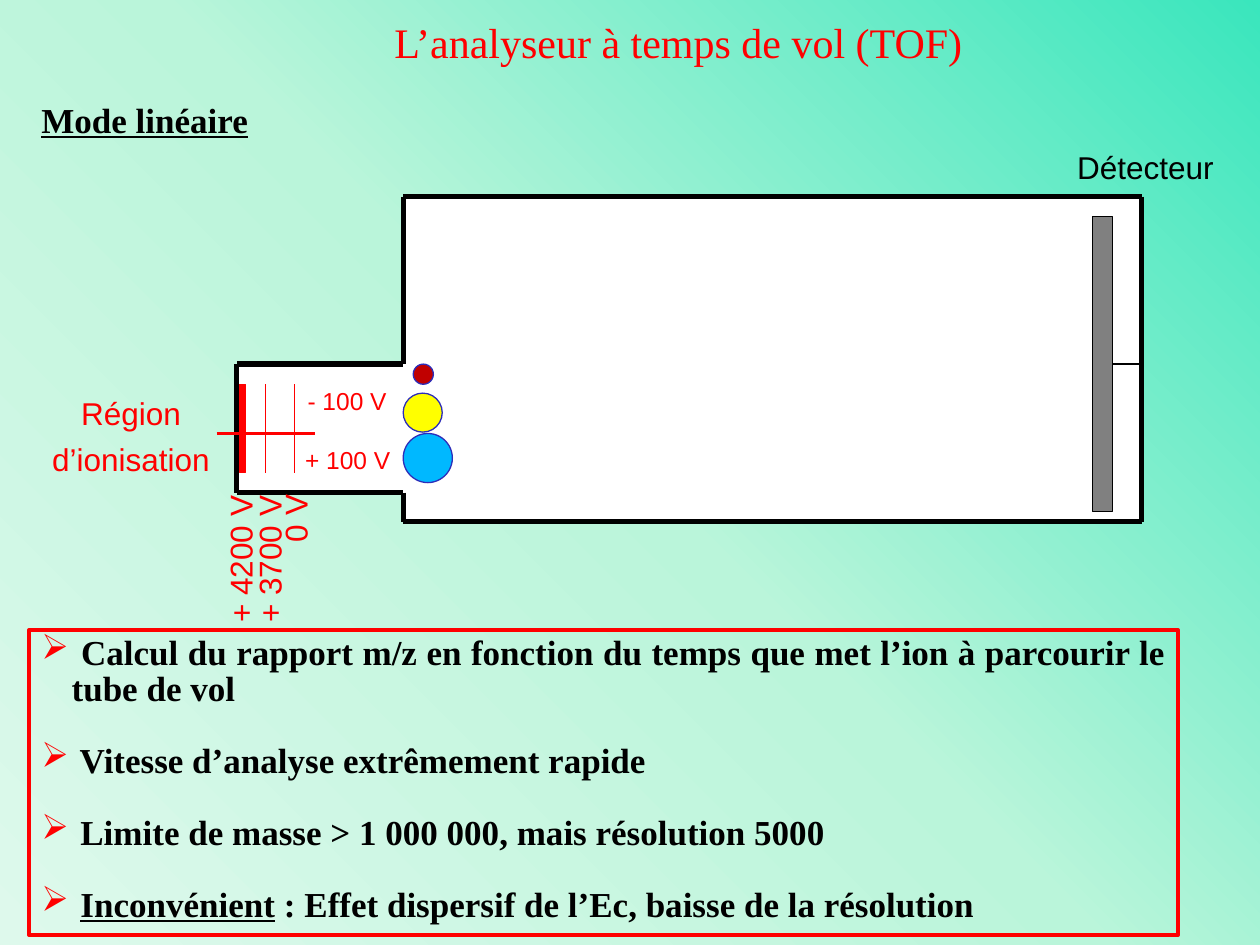
"""Build the slide on the linear time-of-flight analyser."""
from copy import deepcopy
from lxml.etree import SubElement
from pptx import Presentation
from pptx.dml.color import RGBColor
from pptx.enum.shapes import MSO_CONNECTOR, MSO_SHAPE
from pptx.enum.text import MSO_ANCHOR, MSO_AUTO_SIZE, PP_ALIGN
from pptx.oxml.ns import qn
from pptx.util import Inches, Pt

RED = RGBColor(0xFF, 0, 0)
BLACK = RGBColor(0, 0, 0)
WHITE = RGBColor(0xFF, 0xFF, 0xFF)
GREY = RGBColor(0x80, 0x80, 0x80)
NAVY = RGBColor(0x2D, 0x2D, 0xB9)
CRIMSON = RGBColor(0xC0, 0, 0)
YELLOW = RGBColor(0xFF, 0xFF, 0)
SKY = RGBColor(0, 0xB8, 0xFF)
SHADES = [(0, RGBColor(0x3A, 0xE6, 0xBD)), (0.5, RGBColor(0xBA, 0xF5, 0xDA)),
          (1, RGBColor(0xDE, 0xF9, 0xEC))]
SERIF, SANS = "Times New Roman", "Arial"

TITLE = "L’analyseur à temps de vol (TOF)"
MODE = "Mode linéaire"
POINTS = [
    [(" Calcul du rapport m/z en fonction du temps que met l’ion à parcourir le tube de vol", False)],
    [(" Vitesse d’analyse extrêmement rapide", False)],
    [(" Limite de masse > 1 000 000, mais résolution 5000", False)],
    [(" ", False), ("Inconvénient", True),
     (" : Effet dispersif de l’Ec, baisse de la résolution", False)],
]
LABELS = [
    (["Détecteur"], (8.44, 1.17, 1.3, 0.36), 18, BLACK, 0),
    (["Région", "d’ionisation"], (0.31, 3.12, 1.46, 0.73), 18, RED, 0),
    (["+ 4200 V"], (1.32, 4.26, 1.22, 0.36), 18, RED, 270),
    (["+ 3700 V"], (1.55, 4.26, 1.22, 0.36), 18, RED, 270),
    ([" 0 V"], (2.04, 3.97, 0.65, 0.36), 18, RED, 270),
    (["+ 100 V"], (2.32, 3.52, 0.88, 0.3), 14, RED, 0),
    (["- 100 V"], (2.34, 3.05, 0.83, 0.3), 14, RED, 0),
]
IONS = [(3.28, 2.89, 0.16, CRIMSON), (3.2, 3.44, 0.39, SKY), (3.2, 3.12, 0.31, YELLOW)]

WEST, NECK, EAST = 1.88, 3.2, 9.06
TOP, ROOF, FLOOR, BASE = 1.56, 2.89, 3.91, 4.14
WALLS = [(NECK, TOP, EAST, TOP), (NECK, BASE, EAST, BASE), (EAST, TOP, EAST, BASE),
         (NECK, TOP, NECK, ROOF), (NECK, FLOOR, NECK, BASE), (WEST, ROOF, WEST, FLOOR),
         (WEST, ROOF, NECK, ROOF), (WEST, FLOOR, NECK, FLOOR)]
GRIDS = [2.11, 2.34]
MARGIN, WIDTH = 0.23, 9.12

deck = Presentation()
deck.slide_width, deck.slide_height = Inches(10), Inches(7.5)
slide = deck.slides.add_slide(deck.slide_layouts[5])


def paint():
    fill = slide.background.fill
    fill.gradient()
    fill.gradient_angle = 225
    stops = slide.element.find(".//" + qn("a:gsLst"))
    stops.append(deepcopy(stops[-1]))
    for stop, (pos, color) in zip(fill.gradient_stops, SHADES):
        stop.position = pos
        stop.color.rgb = color


def block(kind, box, fill, edge, width=0.75):
    shape = slide.shapes.add_shape(kind, *map(Inches, box))
    shape.shadow.inherit = False
    if fill is None:
        shape.fill.background()
    else:
        shape.fill.solid()
        shape.fill.fore_color.rgb = fill
    shape.line.color.rgb = edge
    shape.line.width = Pt(width)
    return shape


def rule(ends, color, width):
    line = slide.shapes.add_connector(MSO_CONNECTOR.STRAIGHT, *map(Inches, ends))
    line.line.color.rgb = color
    line.line.width = Pt(width)
    SubElement(line.element.spPr, qn("a:effectLst"))


def write(shape, rows, size, font, color, align, wrap=False, bold=False, gap=0):
    frame = shape.text_frame
    frame.word_wrap = wrap
    frame.auto_size = MSO_AUTO_SIZE.SHAPE_TO_FIT_TEXT
    frame.vertical_anchor = MSO_ANCHOR.TOP
    for i, row in enumerate(rows):
        para = frame.add_paragraph() if i else frame.paragraphs[0]
        para.alignment = align
        para.line_spacing = 0.86
        para.space_before = Pt(gap if i else 0)
        for text, under in row:
            run = para.add_run()
            run.text = text
            run.font.name, run.font.size = font, Pt(size)
            run.font.bold, run.font.underline = bold, under
            run.font.color.rgb = color
    return frame


def bullet(para):
    props = para._p.get_or_add_pPr()
    props.set("marL", str(Inches(0.24)))
    props.set("indent", str(-Inches(0.24)))
    tint = SubElement(props, qn("a:buClr"))
    SubElement(tint, qn("a:srgbClr"), val=str(RED))
    SubElement(props, qn("a:buChar"), char="➢")


def label(box):
    return slide.shapes.add_textbox(*map(Inches, box))


paint()
title = slide.shapes.title
title.left, title.top, title.width, title.height = map(Inches, (3.03, 0.14, 4.75, 0.45))
write(title, [[(TITLE, False)]], 24, SERIF, RED, PP_ALIGN.LEFT)
write(label((MARGIN, 0.78, WIDTH, 0.39)), [[(MODE, True)]], 20, SERIF, BLACK,
      PP_ALIGN.JUSTIFY, True, True)

RECT = MSO_SHAPE.RECTANGLE
block(RECT, (NECK, TOP, EAST - NECK, BASE - TOP), WHITE, WHITE)
block(RECT, (WEST, ROOF, NECK - WEST, FLOOR - ROOF), WHITE, WHITE)
for wall in WALLS:
    rule(wall, BLACK, 3)
block(RECT, (1.9, 3.05, 0.05, 0.7), RED, RED)
for x in GRIDS:
    rule((x, 3.05, x, 3.75), RED, 0.75)
rule((1.72, 3.44, 2.5, 3.44), RED, 1.5)
block(RECT, (8.67, 1.72, 0.16, 2.34), GREY, BLACK)
rule((8.83, ROOF, EAST, ROOF), BLACK, 0.75)

for rows, box, size, color, turn in LABELS:
    text = label(box)
    text.rotation = turn
    write(text, [[(row, False)] for row in rows], size, SANS, color, PP_ALIGN.CENTER, gap=8)
for x, y, size, color in IONS:
    block(MSO_SHAPE.OVAL, (x, y, size, size), color, NAVY)

panel = block(RECT, (MARGIN, 5, WIDTH, 2.42), None, RED, 2.25)
notes = write(panel, POINTS, 20, SERIF, BLACK, PP_ALIGN.JUSTIFY, True, True, 20.5)
for para in notes.paragraphs:
    bullet(para)

deck.save("out.pptx")
